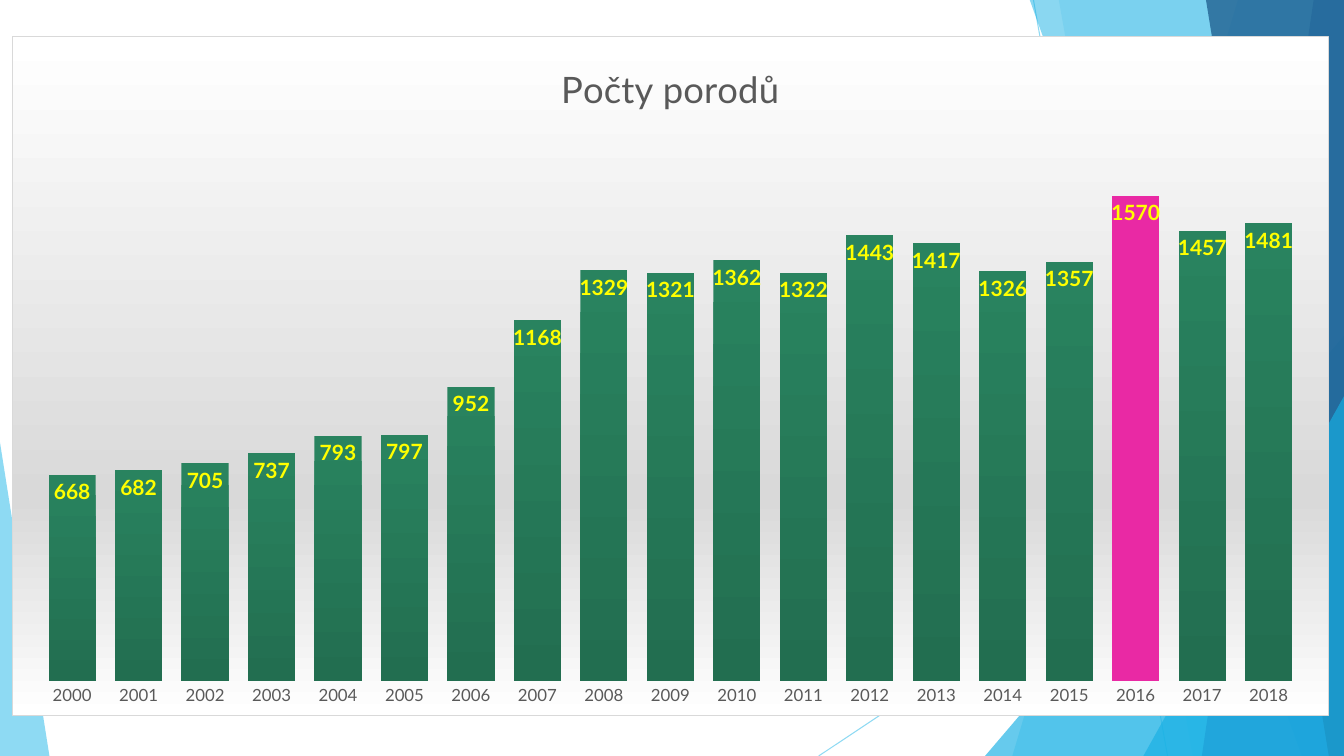
"""Build a slide with a column chart of yearly birth counts over a faceted blue backdrop."""
from lxml import etree
from pptx import Presentation
from pptx.chart.data import CategoryChartData
from pptx.dml.color import RGBColor
from pptx.enum.chart import XL_CHART_TYPE, XL_LABEL_POSITION, XL_TICK_MARK
from pptx.enum.shapes import MSO_CONNECTOR, MSO_SHAPE
from pptx.oxml import parse_xml
from pptx.oxml.ns import nsdecls, qn
from pptx.util import Inches, Pt

COLUMNS = XL_CHART_TYPE.COLUMN_CLUSTERED
INSIDE_END = XL_LABEL_POSITION.INSIDE_END
NO_TICKS = XL_TICK_MARK.NONE
STRAIGHT = MSO_CONNECTOR.STRAIGHT
TRIANGLE = MSO_SHAPE.ISOSCELES_TRIANGLE

SKY = RGBColor(0x5F, 0xCB, 0xEF)
CYAN = RGBColor(0x17, 0xB0, 0xE4)
BLUE = RGBColor(0x2E, 0x83, 0xC3)
NAVY = RGBColor(0x22, 0x62, 0x92)
GREEN = RGBColor(0x29, 0x83, 0x5F)
DARK_GREEN = RGBColor(0x22, 0x6E, 0x50)
PINK = RGBColor(0xE9, 0x29, 0xA4)
YELLOW = RGBColor(0xFF, 0xFF, 0x00)
GREY = RGBColor(0x59, 0x59, 0x59)
SILVER = RGBColor(0xD9, 0xD9, 0xD9)
WHITE = RGBColor(0xFF, 0xFF, 0xFF)
FONT = "Lato"

WIDTH, HEIGHT = 13.33, 7.5
TITLE = "Počty porodů"
FIRST_YEAR, RECORD_YEAR = 2000, 2016
BIRTHS = [668, 682, 705, 737, 793, 797, 952, 1168, 1329, 1321,
          1362, 1322, 1443, 1417, 1326, 1357, 1570, 1457, 1481]
CHART_BOX = (0.12, 0.36, 13.06, 6.74)
PLOT_SHARES = {"x": 0.02, "y": 0.13, "w": 0.96, "h": 0.82}
BACKDROP_STOPS = [(0, WHITE), (68, SILVER), (100, WHITE)]

RAYS = [(10.25, 0, 11.58, HEIGHT), (WIDTH, 4.03, 8.12, HEIGHT)]
# Each facet: kind, geometry, colour, opacity
FACETS = [
    ("band", (12.28, 10.04), SKY, 36),
    ("band", (10.5, 11.83), SKY, 20),
    ("corner", (9.77, 3.33, 3.56, 1), CYAN, 66),
    ("band", (10.21, 12.91), CYAN, 50),
    ("band", (13.03, 11.92), BLUE, 70),
    ("band", (11.96, 13.18), NAVY, 80),
    ("corner", (11.34, 3.93, 1.99, 1), CYAN, 66),
    ("corner", (0, 4.39, 0.49, 0), SKY, 70),
]


def set_opacity(shape, percent):
    color = next(shape._element.spPr.iter(qn("a:srgbClr")))
    etree.SubElement(color, qn("a:alpha")).set("val", str(percent * 1000))


def add_ray(slide, ends):
    ray = slide.shapes.add_connector(STRAIGHT, *map(Inches, ends))
    ray.line.color.rgb = SKY
    ray.line.width = Pt(0.75)
    set_opacity(ray, 70)
    etree.SubElement(ray._element.spPr, qn("a:effectLst"))


def add_facet(slide, kind, geometry, color, opacity):
    if kind == "band":
        top_x, bottom_x = geometry
        corners = [(WIDTH, -0.01), (WIDTH, HEIGHT), (bottom_x, HEIGHT)]
        builder = slide.shapes.build_freeform(Inches(top_x), Inches(-0.01))
        builder.add_line_segments([(Inches(x), Inches(y)) for x, y in corners])
        facet = builder.convert_to_shape()
    else:
        left, top, width, apex = geometry
        box = (left, top, width, HEIGHT - top)
        facet = slide.shapes.add_shape(TRIANGLE, *map(Inches, box))
        facet.adjustments[0] = apex
    facet.shadow.inherit = False
    facet.fill.solid()
    facet.fill.fore_color.rgb = color
    facet.line.fill.background()
    set_opacity(facet, opacity)


def set_font(font, size, color, bold=False):
    font.name, font.size, font.bold = FONT, Pt(size), bold
    font.color.rgb = color


def style_backdrop(chart):
    stops = "".join(f'<a:gs pos="{share * 1000}"><a:srgbClr val="{color}"/></a:gs>'
                    for share, color in BACKDROP_STOPS)
    chart._chartSpace.chart.addnext(parse_xml(
        f'<c:spPr {nsdecls("c", "a")}><a:gradFill><a:gsLst>{stops}</a:gsLst>'
        f'<a:lin ang="5400000" scaled="0"/></a:gradFill><a:ln w="{Pt(0.75)}">'
        f'<a:solidFill><a:srgbClr val="{SILVER}"/></a:solidFill></a:ln></c:spPr>'))


def place_plot(chart):
    plot_area = chart._chartSpace.chart.plotArea
    for layout in plot_area.findall(qn("c:layout")):
        plot_area.remove(layout)
    shares = "".join(f'<c:{side} val="{share}"/>' for side, share in PLOT_SHARES.items())
    plot_area.insert(0, parse_xml(
        f'<c:layout {nsdecls("c")}><c:manualLayout><c:layoutTarget val="inner"/>'
        f'<c:xMode val="edge"/><c:yMode val="edge"/>{shares}</c:manualLayout></c:layout>'))


def add_births_chart(slide):
    births = CategoryChartData()
    births.categories = [str(FIRST_YEAR + i) for i in range(len(BIRTHS))]
    births.add_series(TITLE, BIRTHS)
    chart = slide.shapes.add_chart(COLUMNS, *map(Inches, CHART_BOX), births).chart
    set_font(chart.font, 10, GREY)
    chart.has_legend = False
    chart.has_title = True
    chart.chart_title.text_frame.text = TITLE
    set_font(chart.chart_title.text_frame.paragraphs[0].runs[0].font, 26, GREY)
    chart.chart_title.include_in_layout = False

    years, counts = chart.category_axis, chart.value_axis
    years.major_tick_mark = years.minor_tick_mark = NO_TICKS
    years.format.line.fill.background()
    set_font(years.tick_labels.font, 12, GREY)
    counts.minimum_scale, counts.maximum_scale = 0, 1800
    counts.has_major_gridlines = False
    counts.visible = False

    plot = chart.plots[0]
    plot.gap_width = 41
    plot.vary_by_categories = False
    bars = plot.series[0]
    bars.format.fill.gradient()
    bars.format.fill.gradient_angle = 270
    for stop, color in zip(bars.format.fill.gradient_stops, (GREEN, DARK_GREEN)):
        stop.color.rgb = color
    record = bars.points[RECORD_YEAR - FIRST_YEAR].format.fill
    record.solid()
    record.fore_color.rgb = PINK
    labels = bars.data_labels
    labels.show_value = True
    labels.position = INSIDE_END
    set_font(labels.font, 15, YELLOW, True)
    style_backdrop(chart)
    place_plot(chart)


def main():
    deck = Presentation()
    deck.slide_width, deck.slide_height = Inches(WIDTH), Inches(HEIGHT)
    slide = deck.slides.add_slide(deck.slide_layouts[6])
    for ends in RAYS:
        add_ray(slide, ends)
    for facet in FACETS:
        add_facet(slide, *facet)
    add_births_chart(slide)
    deck.save("out.pptx")


if __name__ == "__main__":
    main()
